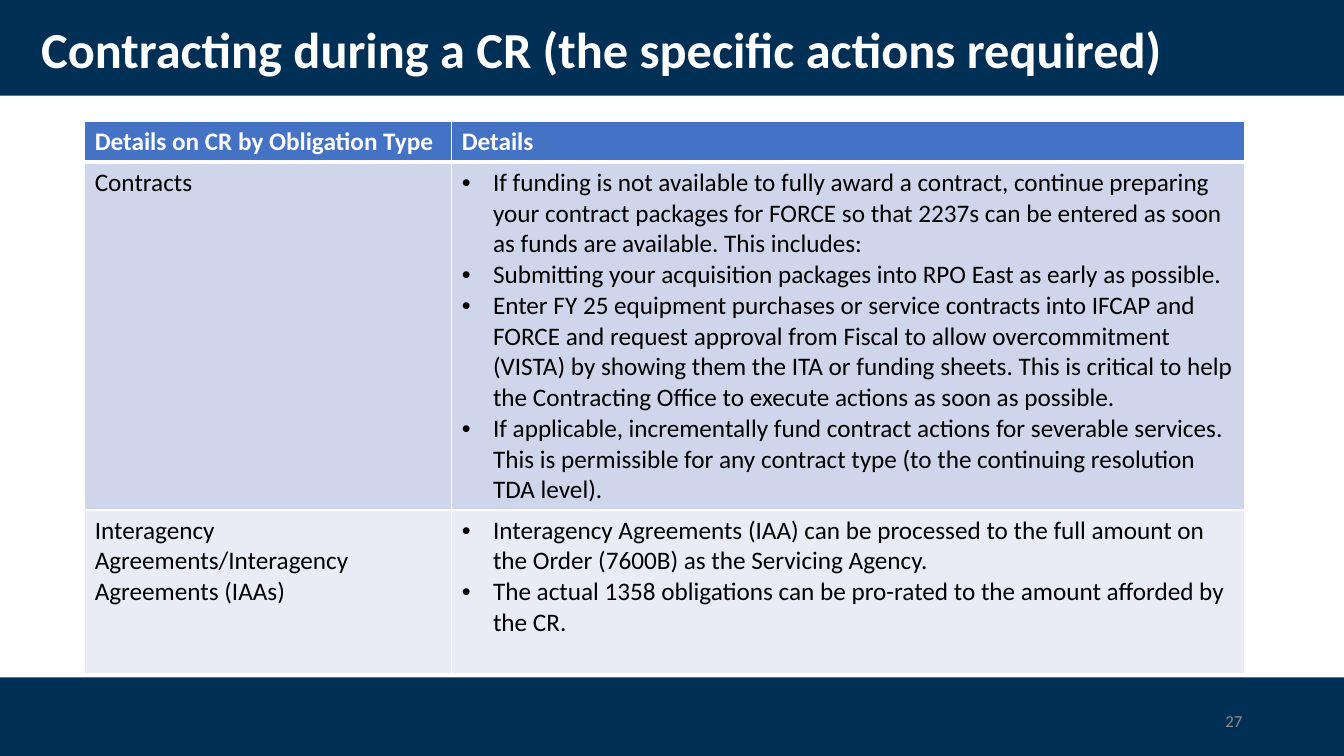
from lxml import etree
from pptx import Presentation
from pptx.dml.color import RGBColor
from pptx.enum.shapes import MSO_SHAPE
from pptx.enum.text import MSO_ANCHOR, PP_ALIGN
from pptx.oxml.ns import qn
from pptx.util import Inches, Pt

RECTANGLE = MSO_SHAPE.RECTANGLE
MIDDLE = MSO_ANCHOR.MIDDLE
LEFT, RIGHT = PP_ALIGN.LEFT, PP_ALIGN.RIGHT

WIDTH, HEIGHT = 13.33, 7.5
FONT = "Calibri"
NAVY, WHITE, BLACK, GRAY = "002F56", "FFFFFF", "000000", "8C8C8C"
HEADER_FILL, BAND_FILLS = "4472C4", ("CFD5EA", "E9EBF5")
BULLET_INDENT = 0.31

COLUMN_WIDTHS = (3.64, 7.86)
ROW_HEIGHTS = (0.41, 3.45, 1.62)
HEADINGS = ("Details on CR by Obligation Type", "Details")
OBLIGATIONS = (
    ("Contracts", (
        "If funding is not available to fully award a contract, continue preparing your contract "
        "packages for FORCE so that 2237s can be entered as soon as funds are available. "
        "This includes:",
        "Submitting your acquisition packages into RPO East as early as possible.",
        "Enter FY 25 equipment purchases or service contracts into IFCAP and FORCE and request "
        "approval from Fiscal to allow overcommitment (VISTA) by showing them the ITA or funding "
        "sheets. This is critical to help the Contracting Office to execute actions as soon as "
        "possible.",
        "If applicable, incrementally fund contract actions for severable services. This is "
        "permissible for any contract type (to the continuing resolution TDA level).",
    )),
    ("Interagency Agreements/Interagency Agreements (IAAs)", (
        "Interagency Agreements (IAA) can be processed to the full amount on the Order (7600B) "
        "as the Servicing Agency.",
        "The actual 1358 obligations can be pro-rated to the amount afforded by the CR.",
    )),
)


def color(value):
    return RGBColor.from_string(value)


def add_bullet(paragraph):
    properties = paragraph._p.get_or_add_pPr()
    properties.set("marL", str(Inches(BULLET_INDENT)))
    properties.set("indent", str(-Inches(BULLET_INDENT)))
    etree.SubElement(properties, qn("a:buFont"), typeface="Arial")
    etree.SubElement(properties, qn("a:buChar"), char="•")


def write_text(frame, paragraphs, size=18, fill=BLACK, bold=False, align=LEFT,
               bulleted=False, line_spacing=None):
    frame.word_wrap = True
    for index, text in enumerate(paragraphs):
        paragraph = frame.add_paragraph() if index else frame.paragraphs[0]
        if bulleted:
            add_bullet(paragraph)
        paragraph.alignment = align
        paragraph.line_spacing = line_spacing
        run = paragraph.add_run()
        run.text = text
        run.font.name, run.font.size, run.font.bold = FONT, Pt(size), bold
        run.font.color.rgb = color(fill)


def add_label(slide, box, text, **text_format):
    shape = slide.shapes.add_textbox(*map(Inches, box))
    shape.text_frame.vertical_anchor = MIDDLE
    write_text(shape.text_frame, [text], **text_format)


def add_band(slide, box):
    band = slide.shapes.add_shape(RECTANGLE, *map(Inches, box))
    band.shadow.inherit = False
    band.fill.solid()
    band.fill.fore_color.rgb = color(NAVY)
    band.line.fill.background()


def set_borders(cell, top=1, bottom=1):
    properties = cell._tc.get_or_add_tcPr()
    sides = (("a:lnL", 1), ("a:lnR", 1), ("a:lnT", top), ("a:lnB", bottom))
    for index, (tag, width) in enumerate(sides):
        line = etree.Element(qn(tag), w=str(Pt(width)))
        fill = etree.SubElement(line, qn("a:solidFill"))
        etree.SubElement(fill, qn("a:srgbClr"), val=WHITE)
        properties.insert(index, line)


def style_cell(cell, paragraphs, background, top=1, bottom=1, **text_format):
    cell.fill.solid()
    cell.fill.fore_color.rgb = color(background)
    set_borders(cell, top, bottom)
    write_text(cell.text_frame, paragraphs, **text_format)


def add_header(slide, box):
    left, top, width, height = box
    add_band(slide, box)
    add_label(slide, (left + 0.31, top + 0.18, 11.5, 0.68),
              "Contracting during a CR (the specific actions required)",
              size=36, fill=WHITE, bold=True, line_spacing=0.9)


def add_obligation_table(slide, box):
    frame = slide.shapes.add_table(len(ROW_HEIGHTS), len(COLUMN_WIDTHS), *map(Inches, box))
    table = frame.table
    for column, width in zip(table.columns, COLUMN_WIDTHS):
        column.width = Inches(width)
    for row, height in zip(table.rows, ROW_HEIGHTS):
        row.height = Inches(height)
    for index, heading in enumerate(HEADINGS):
        style_cell(table.cell(0, index), [heading], HEADER_FILL, bottom=3,
                   fill=WHITE, bold=True)
    for row, (obligation, details) in enumerate(OBLIGATIONS, start=1):
        background = BAND_FILLS[row - 1]
        top = 3 if row == 1 else 1
        style_cell(table.cell(row, 0), [obligation], background, top=top)
        style_cell(table.cell(row, 1), details, background, top=top, bulleted=True)


def add_footer(slide, box):
    left, top, width, height = box
    add_band(slide, box)
    add_label(slide, (left + 9.42, top + 0.23, 3, 0.4), "27",
              size=12, fill=GRAY, align=RIGHT)


def main():
    presentation = Presentation()
    presentation.slide_width, presentation.slide_height = Inches(WIDTH), Inches(HEIGHT)
    slide = presentation.slides.add_slide(presentation.slide_layouts[6])
    add_header(slide, (0, 0, WIDTH, 0.95))
    add_footer(slide, (0, 6.72, WIDTH, HEIGHT - 6.72))
    add_obligation_table(slide, (0.84, 1.2, sum(COLUMN_WIDTHS), sum(ROW_HEIGHTS)))
    presentation.save("out.pptx")


if __name__ == "__main__":
    main()
